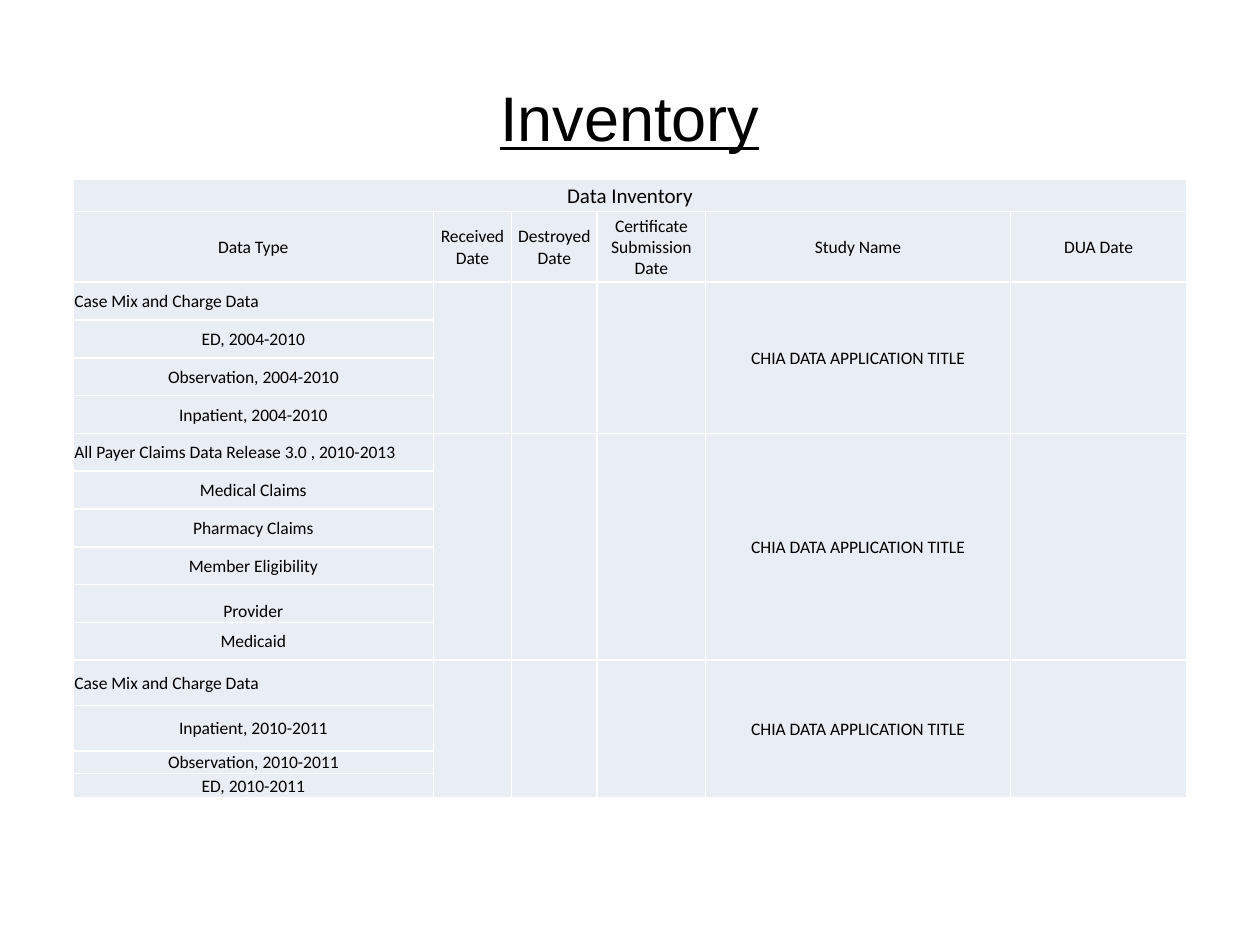
import pptx
import pptx.dml.color
import pptx.enum.text
import pptx.util

Inches, Pt = pptx.util.Inches, pptx.util.Pt
Align, Anchor = pptx.enum.text.PP_ALIGN, pptx.enum.text.MSO_ANCHOR


def color(code):
    return pptx.dml.color.RGBColor.from_string(code)


def style(item, **values):
    for name, value in values.items():
        setattr(item, name, value)


deck = pptx.Presentation()
style(deck, slide_width=Inches(10), slide_height=Inches(7.5))
slide = deck.slides.add_slide(deck.slide_layouts[5])

# Title
title = slide.shapes.title
style(title, left=Inches(0.5), top=Inches(0.3), width=Inches(9), height=Inches(1.25))
title.text_frame.text = "Inventory"
title.text_frame.vertical_anchor = Anchor.MIDDLE
line = title.text_frame.paragraphs[0]
line.alignment = Align.CENTER
style(line.runs[0].font, name="Arial", size=Pt(36), underline=True)
line.runs[0].font.color.rgb = color("000000")

# Table content: each group has a heading and its data types
heads = ["Data Type", "Received Date", "Destroyed Date",
         "Certificate Submission Date", "Study Name", "DUA Date"]
groups = [
    ["Case Mix and Charge Data", "ED, 2004-2010", "Observation, 2004-2010",
     "Inpatient, 2004-2010"],
    ["All Payer Claims Data Release 3.0 , 2010-2013", "Medical Claims",
     "Pharmacy Claims", "Member Eligibility", "Provider", "Medicaid"],
    ["Case Mix and Charge Data", "Inpatient, 2010-2011",
     "Observation, 2010-2011", "ED, 2010-2011"],
]
study = "CHIA DATA APPLICATION TITLE"
rows = [["Data Inventory"] + [""] * 5, heads]
for group in groups:
    for step, kind in enumerate(group):
        rows.append([kind, "", "", "", "" if step else study, ""])

# Table grid
wide = [2.86, 0.62, 0.68, 0.86, 2.42, 1.4]
high = [0.26, 0.56] + [0.3] * 10 + [0.36, 0.36, 0.18, 0.19]
table = slide.shapes.add_table(
    len(rows), len(wide), Inches(0.58), Inches(1.42),
    Inches(sum(wide)), Inches(sum(high))).table
style(table, first_row=False, horz_banding=False)
for column, width in zip(table.columns, wide):
    column.width = Inches(width)
for row, height in zip(table.rows, high):
    row.height = Inches(height)

# Cell text and fill
left = {group[0] for group in groups}
for r, row in enumerate(rows):
    for c, text in enumerate(row):
        cell = table.cell(r, c)
        style(cell, text=text, margin_left=Inches(0.01), margin_right=Inches(0.01),
              margin_top=Inches(0.01), margin_bottom=0,
              vertical_anchor=Anchor.BOTTOM if text == "Provider" else Anchor.MIDDLE)
        cell.fill.solid()
        cell.fill.fore_color.rgb = color("E9EDF4")
        line = cell.text_frame.paragraphs[0]
        line.alignment = Align.LEFT if text in left else Align.CENTER
        for run in line.runs:
            style(run.font, name="Calibri", size=Pt(10 if r else 12))
            run.font.color.rgb = color("000000")
        # Empty cells need a small size too, or they stretch the rows
        line._p.get_or_add_endParaRPr().set("sz", "1000")

# Merged cells: the banner, then every column beside a group
table.cell(0, 0).merge(table.cell(0, 5))
start = 2
for group in groups:
    end = start + len(group) - 1
    for c in range(1, len(wide)):
        table.cell(start, c).merge(table.cell(end, c))
    start = end + 1

deck.save("out.pptx")
